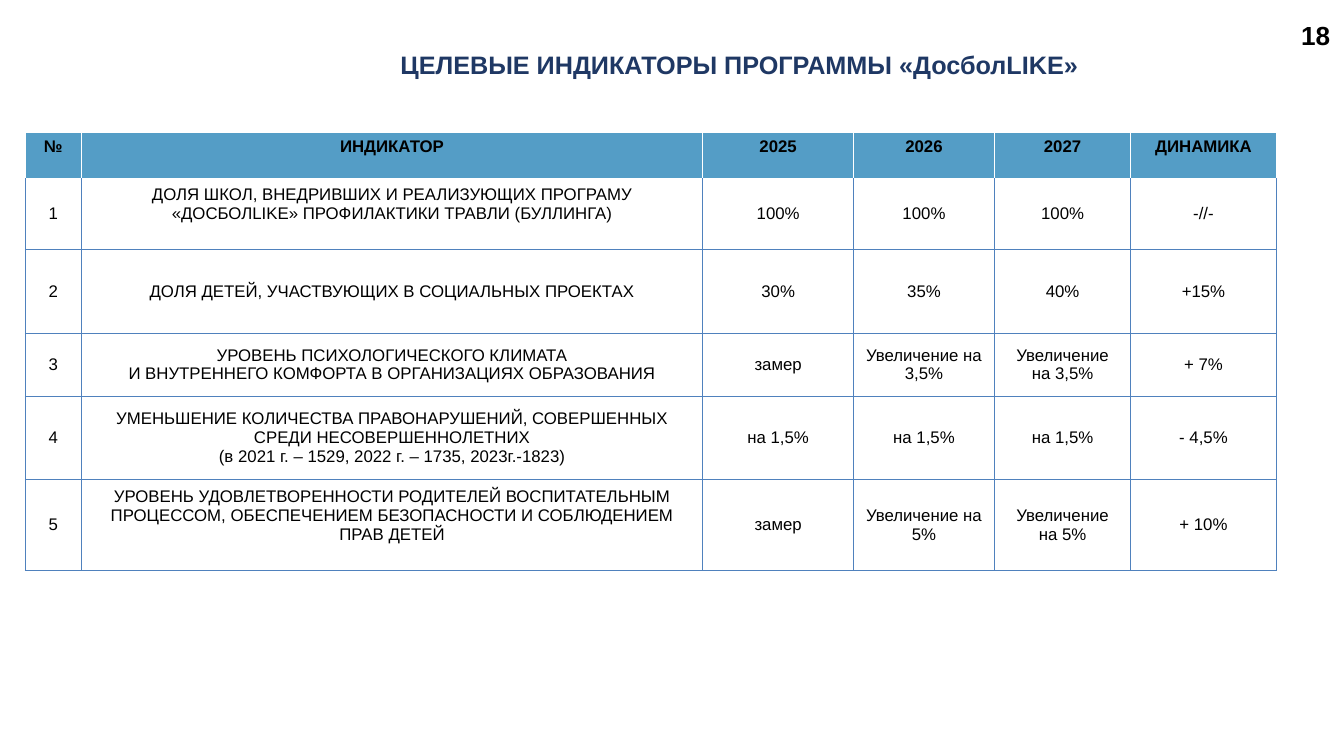
import pptx
import pptx.dml.color
import pptx.enum.text
import pptx.oxml.ns
import pptx.util
from lxml import etree

Pt = pptx.util.Pt
ALIGN = pptx.enum.text.PP_ALIGN
ANCHOR = pptx.enum.text.MSO_ANCHOR

# Content
HEADING = "ЦЕЛЕВЫЕ ИНДИКАТОРЫ ПРОГРАММЫ «ДосболLIKE»"
PAGE_NUMBER = "18"
HEADER = ["№", "ИНДИКАТОР", "2025", "2026", "2027", "ДИНАМИКА"]
INDICATORS = [
    ["1", "ДОЛЯ ШКОЛ, ВНЕДРИВШИХ И РЕАЛИЗУЮЩИХ ПРОГРАМУ «ДОСБОЛLIKE» ПРОФИЛАКТИКИ ТРАВЛИ (БУЛЛИНГА)",
     "100%", "100%", "100%", "-//-"],
    ["2", "ДОЛЯ ДЕТЕЙ, УЧАСТВУЮЩИХ В СОЦИАЛЬНЫХ ПРОЕКТАХ",
     "30%", "35%", "40%", "+15%"],
    ["3", "УРОВЕНЬ ПСИХОЛОГИЧЕСКОГО КЛИМАТА\nИ ВНУТРЕННЕГО КОМФОРТА В ОРГАНИЗАЦИЯХ ОБРАЗОВАНИЯ",
     "замер", "Увеличение на 3,5%", "Увеличение на 3,5%", "+ 7%"],
    ["4", "УМЕНЬШЕНИЕ КОЛИЧЕСТВА ПРАВОНАРУШЕНИЙ, СОВЕРШЕННЫХ СРЕДИ НЕСОВЕРШЕННОЛЕТНИХ\n"
          "(в 2021 г. – 1529, 2022 г. – 1735, 2023г.-1823)",
     "на 1,5%", "на 1,5%", "на 1,5%", "- 4,5%"],
    ["5", "УРОВЕНЬ УДОВЛЕТВОРЕННОСТИ РОДИТЕЛЕЙ ВОСПИТАТЕЛЬНЫМ ПРОЦЕССОМ, "
          "ОБЕСПЕЧЕНИЕМ БЕЗОПАСНОСТИ И СОБЛЮДЕНИЕМ ПРАВ ДЕТЕЙ",
     "замер", "Увеличение на 5%", "Увеличение на 5%", "+ 10%"],
]
COLUMN_WIDTHS = [60, 666, 161.5, 151, 146, 156]
ROW_HEIGHTS = [49.5, 75.5, 90, 67.5, 89, 98]
RAISED_CELLS = {(1, 1), (5, 1)}  # text sits one line higher in these

NAVY, BLACK, WHITE = "1F3864", "000000", "FFFFFF"
HEADER_BLUE, GRID_BLUE = "549DC6", "4F81BD"


def rgb(value):
    return pptx.dml.color.RGBColor.from_string(value)


def write(frame, text, size, color, bold=False, align=ALIGN.CENTER):
    frame.word_wrap = True
    frame.text = text
    for paragraph in frame.paragraphs:
        paragraph.alignment = align
        font = paragraph.font
        font.name, font.size, font.bold = "Arial", Pt(size), bold
        font.color.rgb = rgb(color)


def set_border(cell, side, color):
    qn = pptx.oxml.ns.qn
    line = etree.SubElement(cell._tc.get_or_add_tcPr(), qn(f"a:ln{side}"), w=str(Pt(1)))
    fill = etree.SubElement(line, qn("a:solidFill"))
    etree.SubElement(fill, qn("a:srgbClr"), val=color)


deck = pptx.Presentation()
deck.slide_width, deck.slide_height = Pt(1440), Pt(810)
slide = deck.slides.add_slide(deck.slide_layouts[5])

# Heading
heading = slide.shapes.title
heading.left, heading.top, heading.width, heading.height = Pt(235), Pt(47), Pt(1114), Pt(44)
write(heading.text_frame, HEADING, 27, NAVY, bold=True)
heading.text_frame.vertical_anchor = ANCHOR.MIDDLE

# Indicator table
rows = [HEADER] + INDICATORS
indicator_table = slide.shapes.add_table(
    len(rows), len(HEADER), Pt(27), Pt(142),
    Pt(sum(COLUMN_WIDTHS)), Pt(sum(ROW_HEIGHTS))).table
for column, width in zip(indicator_table.columns, COLUMN_WIDTHS):
    column.width = Pt(width)
for row, height in zip(indicator_table.rows, ROW_HEIGHTS):
    row.height = Pt(height)

for r, texts in enumerate(rows):
    is_header = r == 0
    for c, text in enumerate(texts):
        cell = indicator_table.cell(r, c)
        write(cell.text_frame, text, 18, BLACK, bold=is_header)
        cell.margin_left = cell.margin_right = Pt(11)
        cell.margin_top = Pt(5.5)
        cell.margin_bottom = Pt(26 if (r, c) in RAISED_CELLS else 5.5)
        cell.vertical_anchor = ANCHOR.TOP if is_header else ANCHOR.MIDDLE
        for side in "LRTB":
            white_line = is_header or (r == 1 and side == "T")
            set_border(cell, side, WHITE if white_line else GRID_BLUE)
        cell.fill.solid()
        cell.fill.fore_color.rgb = rgb(HEADER_BLUE if is_header else WHITE)

# Page number
page_number = slide.shapes.add_textbox(Pt(1387), Pt(17.5), Pt(50), Pt(41))
write(page_number.text_frame, PAGE_NUMBER, 28, BLACK, bold=True, align=ALIGN.LEFT)

deck.save("out.pptx")
